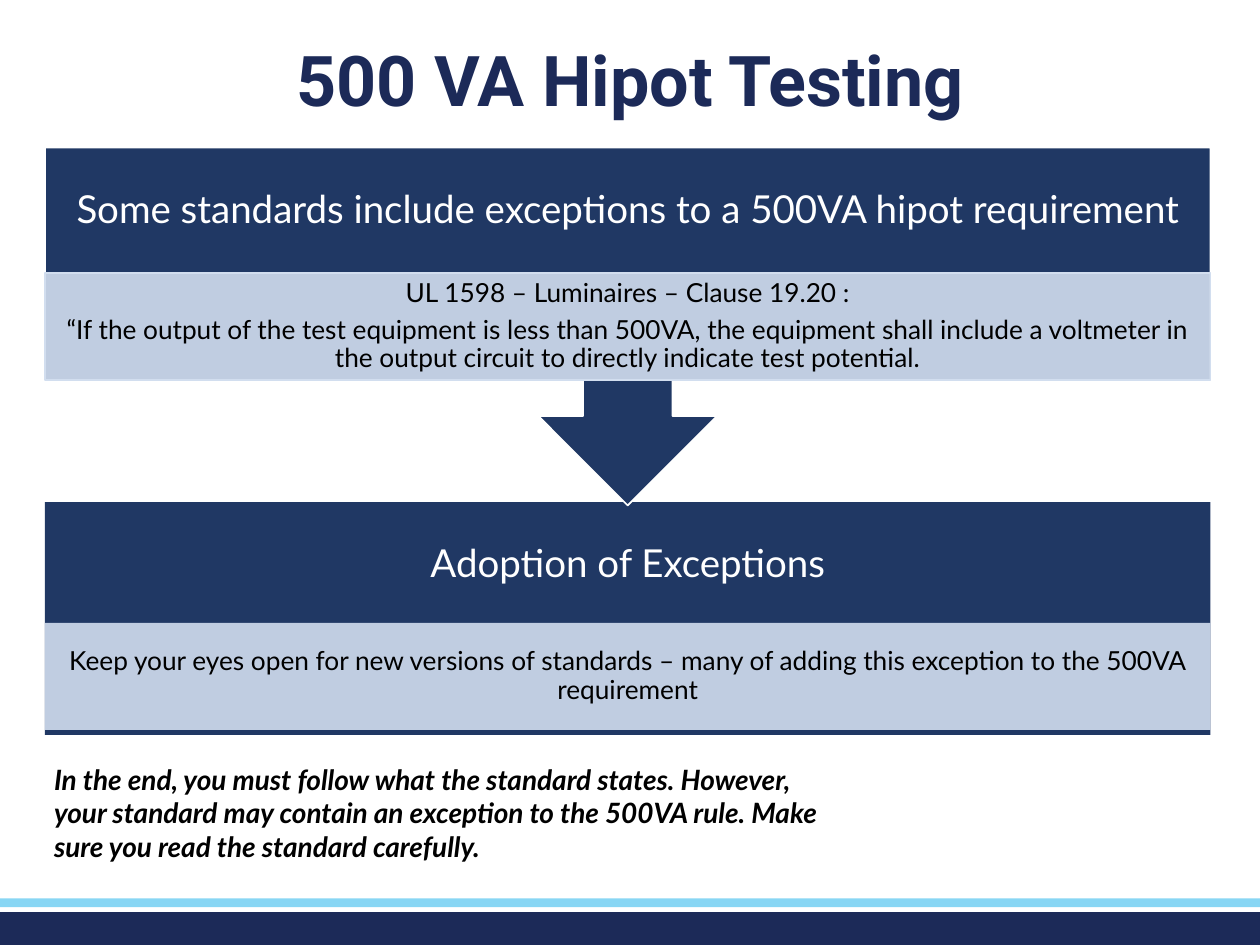
from dataclasses import dataclass

from lxml import etree
from pptx import Presentation
from pptx.dml.color import RGBColor
from pptx.enum.shapes import MSO_SHAPE
from pptx.enum.text import MSO_ANCHOR, PP_ALIGN
from pptx.oxml.ns import qn
from pptx.util import Pt

RECT, CALLOUT = MSO_SHAPE.RECTANGLE, MSO_SHAPE.DOWN_ARROW_CALLOUT
CENTER, LEFT = PP_ALIGN.CENTER, PP_ALIGN.LEFT
MIDDLE, TOP = MSO_ANCHOR.MIDDLE, MSO_ANCHOR.TOP


@dataclass(frozen=True)
class Theme:
    navy: str = "1C2A58"
    sky: str = "88D6F4"
    block: str = "203864"
    pale: str = "D2DEEF"
    white: str = "FFFFFF"
    black: str = "000000"
    title_font: str = "Roboto"
    body_font: str = "Lato"
    title_size: float = 40
    heading_size: float = 22
    detail_size: float = 15
    note_size: float = 16


THEME = Theme()
SLIDE_W, SLIDE_H = 720, 540
BLOCK_X, BLOCK_W = 25.7, 666
HEADING_H, DETAIL_H = 72, 61.2

TITLE = "500 VA Hipot Testing"
# top and height of the block, its shape, outline, offset of the detail band
BLOCKS = [
    dict(top=287, height=133, shape=RECT, outlined=False, detail_at=68.9,
         heading="Adoption of Exceptions",
         details=["Keep your eyes open for new versions of standards – many of "
                  "adding this exception to the 500VA requirement"]),
    dict(top=84.4, height=204.5, shape=CALLOUT, outlined=True, detail_at=71.6,
         heading="Some standards include exceptions to a 500VA hipot requirement",
         details=["UL 1598 – Luminaires – Clause 19.20 :",
                  "“If the output of the test equipment is less than 500VA, the "
                  "equipment shall include a voltmeter in the output circuit to "
                  "directly indicate test potential."]),
]
NOTE = ("In the end, you must follow what the standard states. However, your "
        "standard may contain an exception to the 500VA rule. Make sure you "
        "read the standard carefully.")
FOOTER_BARS = [(521.3, 18.7, THEME.navy), (513.4, 5, THEME.sky)]


def rgb(value):
    return RGBColor.from_string(value)


def set_alpha(color_format, percent):
    """Make a solid fill partly transparent; color_format is its fill."""
    color = color_format._xPr.find(f"{qn('a:solidFill')}/{qn('a:srgbClr')}")
    etree.SubElement(color, qn("a:alpha"), val=str(percent * 1000))


def write(sp, paragraphs, *, size, color, font=THEME.body_font, bold=False,
          italic=False, align=CENTER, anchor=MIDDLE, spacing=0.9, after=0,
          inset=(7.2, 3.6)):
    tf = sp.text_frame
    tf.word_wrap = True
    tf.vertical_anchor = anchor
    tf.margin_left = tf.margin_right = Pt(inset[0])
    tf.margin_top = tf.margin_bottom = Pt(inset[1])
    for i, text in enumerate(paragraphs):
        p = tf.add_paragraph() if i else tf.paragraphs[0]
        p.alignment, p.line_spacing = align, spacing
        p.space_before, p.space_after = Pt(0), Pt(after)
        r = p.add_run()
        r.text = text
        r.font.name, r.font.size = font, Pt(size)
        r.font.bold, r.font.italic = bold, italic
        r.font.color.rgb = rgb(color)


def add_box(s, kind, x, y, w, h, fill, line=None, alpha=None):
    sp = s.shapes.add_shape(kind, Pt(x), Pt(y), Pt(w), Pt(h))
    sp.shadow.inherit = False
    sp.fill.solid()
    sp.fill.fore_color.rgb = rgb(fill)
    if line:
        sp.line.color.rgb = rgb(line)
        sp.line.width = Pt(1)
    else:
        sp.line.fill.background()
    if alpha:
        set_alpha(sp.fill, alpha)
    return sp


def add_block(s, block):
    top, outlined = block["top"], block["outlined"]
    add_box(s, block["shape"], BLOCK_X, top, BLOCK_W, block["height"],
            THEME.block, line=THEME.white if outlined else None)
    heading = s.shapes.add_textbox(Pt(BLOCK_X), Pt(top), Pt(BLOCK_W), Pt(HEADING_H))
    write(heading, [block["heading"]], size=THEME.heading_size,
          color=THEME.white, inset=(12, 12))
    detail = add_box(s, RECT, BLOCK_X, top + block["detail_at"], BLOCK_W, DETAIL_H,
                     THEME.pale, line=THEME.pale if outlined else None, alpha=90)
    write(detail, block["details"], size=THEME.detail_size, color=THEME.black,
          after=5.25, inset=(8.6, 1.4))


def main():
    prs = Presentation()
    prs.slide_width, prs.slide_height = Pt(SLIDE_W), Pt(SLIDE_H)
    s = prs.slides.add_slide(prs.slide_layouts[5])

    for y, height, color in FOOTER_BARS:
        add_box(s, RECT, 0, y, SLIDE_W, height, color)

    title = s.shapes.title
    title.left, title.top, title.width, title.height = Pt(36), Pt(24), Pt(648), Pt(47.5)
    write(title, [TITLE], size=THEME.title_size, color=THEME.navy,
          font=THEME.title_font, bold=True)

    for block in BLOCKS:
        add_block(s, block)

    note = s.shapes.add_textbox(Pt(23.8), Pt(432), Pt(468), Pt(65.5))
    write(note, [NOTE], size=THEME.note_size, color=THEME.black, bold=True,
          italic=True, align=LEFT, anchor=TOP, spacing=1.0)

    prs.save("out.pptx")


if __name__ == "__main__":
    main()
